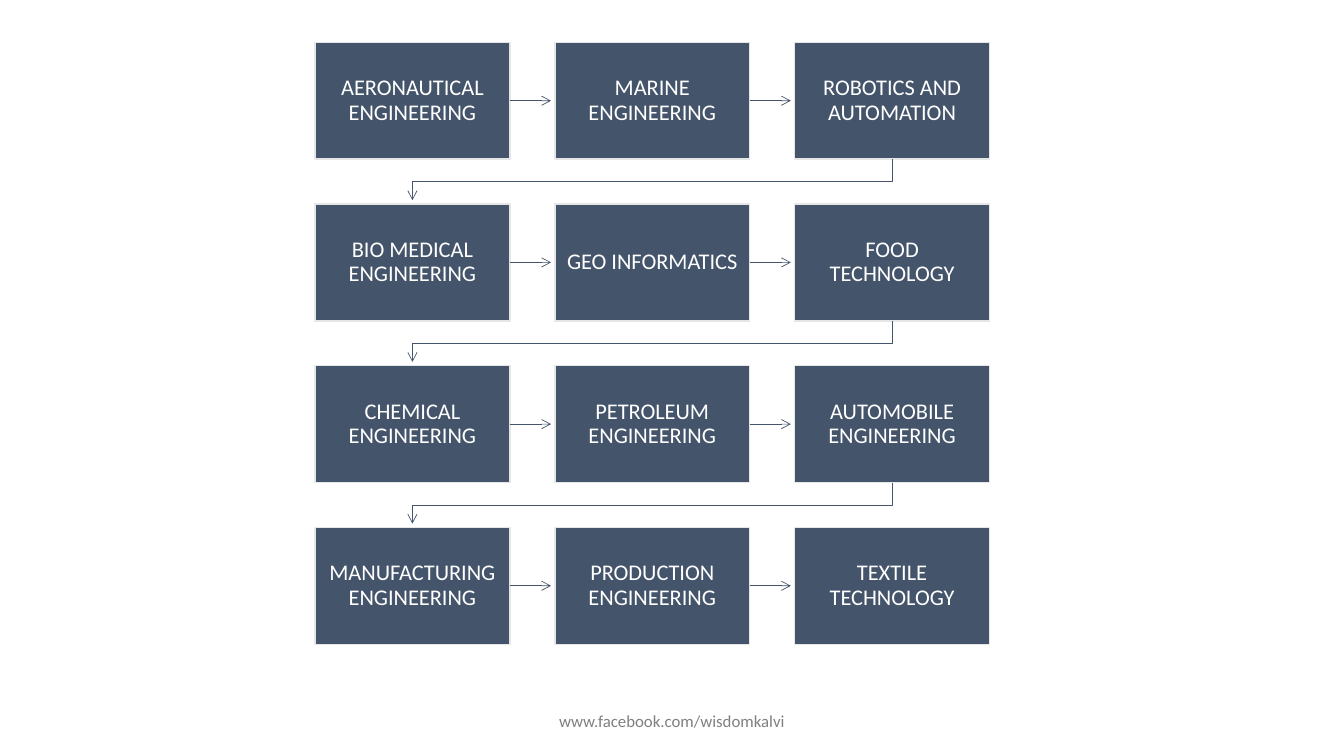
from lxml import etree
from pptx import Presentation
from pptx.dml.color import RGBColor
from pptx.enum.shapes import MSO_CONNECTOR, MSO_SHAPE
from pptx.enum.text import MSO_ANCHOR, PP_ALIGN
from pptx.oxml.ns import qn
from pptx.util import Pt

RECT = MSO_SHAPE.RECTANGLE
LINE = MSO_CONNECTOR.STRAIGHT
MID = MSO_ANCHOR.MIDDLE
CENTER = PP_ALIGN.CENTER
HEX = {"slate": "44546A", "edge": "E7E6E6", "white": "FFFFFF", "gray": "808080"}
COLS = 3
LEFT, TOP = 225, 30.2
WIDE, HIGH = 139.2, 83.5
STEP, DROP = 171.3, 115.5
GAP = STEP - WIDE
TURN = 16
TIP = 2.7

FIELDS = [
    "AERONAUTICAL ENGINEERING", "MARINE ENGINEERING", "ROBOTICS AND AUTOMATION",
    "BIO MEDICAL ENGINEERING", "GEO INFORMATICS", "FOOD TECHNOLOGY",
    "CHEMICAL ENGINEERING", "PETROLEUM ENGINEERING", "AUTOMOBILE ENGINEERING",
    "MANUFACTURING ENGINEERING", "PRODUCTION ENGINEERING", "TEXTILE TECHNOLOGY",
]


def write(shape, text, size, color):
    frame = shape.text_frame
    frame.text = text
    frame.word_wrap = True
    frame.vertical_anchor = MID
    para = frame.paragraphs[0]
    para.alignment = CENTER
    font = para.runs[0].font
    font.name = "Calibri"
    font.size = Pt(size)
    font.color.rgb = RGBColor.from_string(HEX[color])
    return frame


def point(shape):
    shape.line.color.rgb = RGBColor.from_string(HEX["slate"])
    shape.line.width = Pt(0.5)
    props = shape.element.spPr
    etree.SubElement(props.find(qn("a:ln")), qn("a:tailEnd"), type="arrow")
    etree.SubElement(props, qn("a:effectLst"))


deck = Presentation()
deck.slide_width, deck.slide_height = Pt(960), Pt(540)
slide = deck.slides.add_slide(deck.slide_layouts[6])
shapes = slide.shapes

foot = shapes.add_textbox(Pt(318), Pt(500.5), Pt(324), Pt(28.75))
write(foot, "www.facebook.com/wisdomkalvi", 12, "gray")

for i, field in enumerate(FIELDS):
    row, col = divmod(i, COLS)
    x, y = LEFT + col * STEP, TOP + row * DROP
    box = shapes.add_shape(RECT, Pt(x), Pt(y), Pt(WIDE), Pt(HIGH))
    box.shadow.inherit = False
    box.fill.solid()
    box.fill.fore_color.rgb = RGBColor.from_string(HEX["slate"])
    box.line.color.rgb = RGBColor.from_string(HEX["edge"])
    box.line.width = Pt(1)
    frame = write(box, field, 16, "white")
    frame.margin_left = frame.margin_right = Pt(6.8)
    frame.margin_top = frame.margin_bottom = Pt(7.2)
    frame.paragraphs[0].line_spacing = 0.9

    if col < COLS - 1:
        level = Pt(y + HIGH / 2)
        arrow = shapes.add_connector(LINE, Pt(x + WIDE), level, Pt(x + STEP - TIP), level)
        arrow.begin_connect(box, 3)
        point(arrow)
    elif i < len(FIELDS) - 1:
        start, end = Pt(x + WIDE / 2), Pt(LEFT + WIDE / 2)
        base = y + HIGH
        bend = Pt(base + TURN)
        path = shapes.build_freeform(start, Pt(base))
        path.add_line_segments(
            [(start, bend), (end, bend), (end, Pt(y + DROP - TIP))], close=False
        )
        route = path.convert_to_shape()
        route.fill.background()
        point(route)

deck.save("out.pptx")
